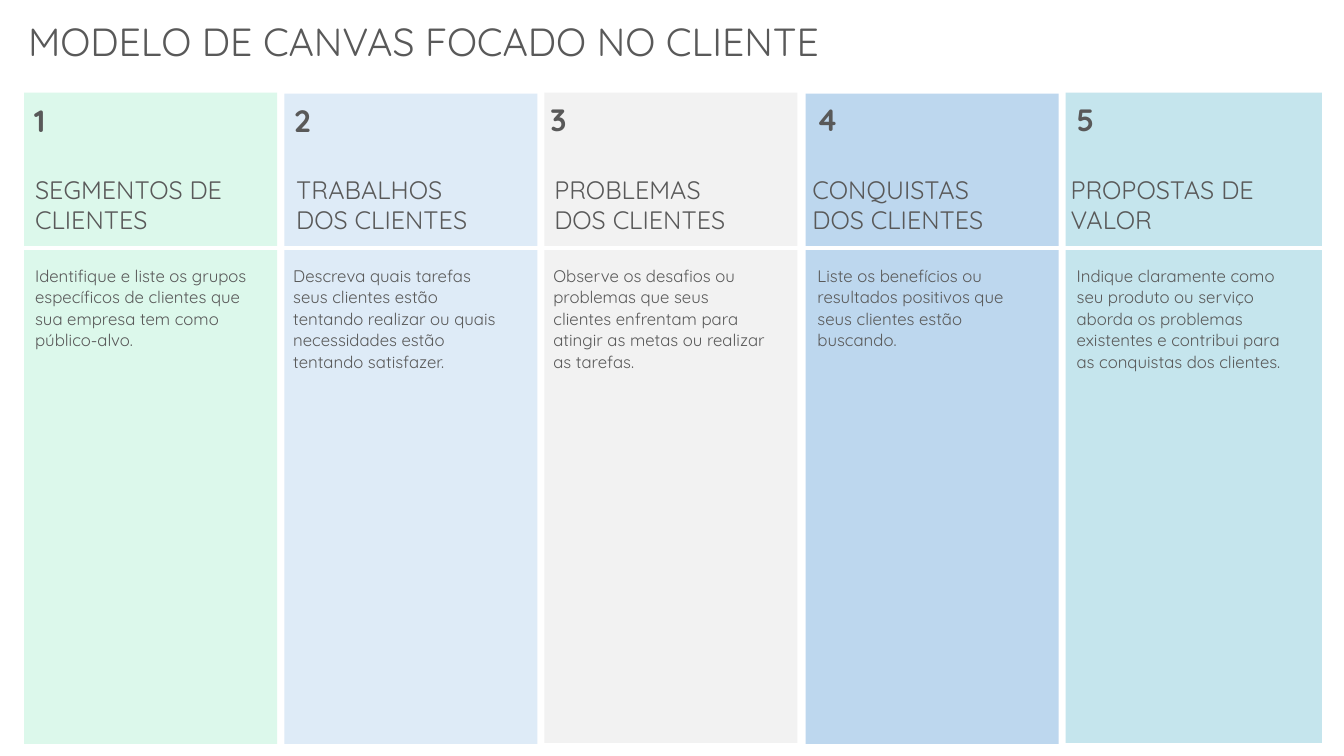
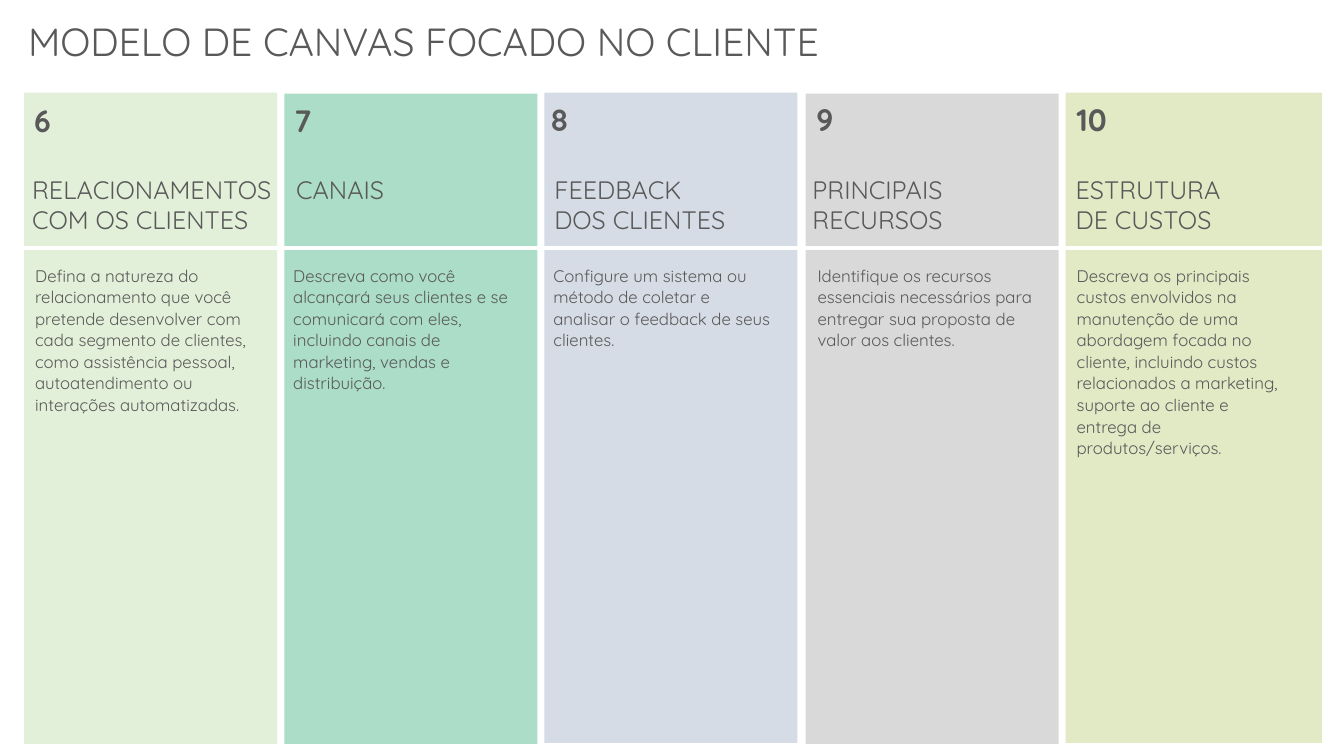
from collections import namedtuple

from lxml import etree
from pptx import Presentation
from pptx.dml.color import RGBColor
from pptx.enum.shapes import MSO_CONNECTOR, MSO_SHAPE
from pptx.enum.text import MSO_AUTO_SIZE
from pptx.oxml.ns import qn
from pptx.util import Pt

RECT = MSO_SHAPE.RECTANGLE
LINE = MSO_CONNECTOR.STRAIGHT
GROW = MSO_AUTO_SIZE.SHAPE_TO_FIT_TEXT
FIXED = MSO_AUTO_SIZE.NONE

PX = 9144
WIDE, HIGH = 1333, 750
FONT = "Quicksand"
TITLE = "MODELO DE CANVAS FOCADO NO CLIENTE"
COLORS = {
    "text": "595959", "rule": "FFFFFF",
    "mint": "DCF8EB", "ice": "DEEBF7", "pale": "F2F2F2",
    "sky": "BDD7EE", "aqua": "C5E5ED",
    "leaf": "E2F0D9", "jade": "ABDDC9", "slate": "D6DCE5",
    "gray": "D9D9D9", "lime": "E1E9C5",
}

Box = namedtuple("Box", "x y w h")
Slot = namedtuple("Slot", "wide high drop num_x num_y body_x")
Part = namedtuple("Part", "fill head head_x head_w body body_w")

LEFT, TOP, PITCH = 24, 92, 258.25
SLOTS = [
    Slot(251, 646, 0, 0, 1, 1),
    Slot(251, 645, 1, 0, 1, -1),
    Slot(251, 645, 0, -4, 0, -1),
    Slot(251, 645, 1, 1, 0, 2),
    Slot(254, 645, 0, 1, 0, 1),
]

PAGES = [
    [
        Part("mint", "SEGMENTOS DE CLIENTES", 1, 250,
             "Identifique e liste os grupos específicos de clientes que sua "
             "empresa tem como público-alvo.", 238),
        Part("ice", "TRABALHOS\nDOS CLIENTES", 2, 250,
             "Descreva quais tarefas seus clientes estão tentando realizar ou "
             "quais necessidades estão tentando satisfazer.", 223),
        Part("pale", "PROBLEMAS\nDOS CLIENTES", 0, 250,
             "Observe os desafios ou problemas que seus clientes enfrentam "
             "para atingir as metas ou realizar as tarefas.", 235),
        Part("sky", "CONQUISTAS\nDOS CLIENTES", -3, 250,
             "Liste os benefícios ou resultados positivos que seus clientes "
             "estão buscando.", 207),
        Part("aqua", "PROPOSTAS DE VALOR", -5, 250,
             "Indique claramente como seu produto ou serviço aborda os "
             "problemas existentes e contribui para as conquistas dos "
             "clientes.", 225),
    ],
    [
        Part("leaf", "RELACIONAMENTOS COM OS CLIENTES", -2, 271,
             "Defina a natureza do relacionamento que você pretende "
             "desenvolver com cada segmento de clientes, como assistência "
             "pessoal, autoatendimento ou interações automatizadas.", 238),
        Part("jade", "CANAIS", 2, 250,
             "Descreva como você alcançará seus clientes e se comunicará com "
             "eles, incluindo canais de marketing, vendas e distribuição.",
             235),
        Part("slate", "FEEDBACK\nDOS CLIENTES", 0, 250,
             "Configure um sistema ou método de coletar e analisar o feedback "
             "de seus clientes.", 235),
        Part("gray", "PRINCIPAIS\nRECURSOS", -3, 250,
             "Identifique os recursos essenciais necessários para entregar "
             "sua proposta de valor aos clientes.", 238),
        Part("lime", "ESTRUTURA\nDE CUSTOS", 0, 245,
             "Descreva os principais custos envolvidos na manutenção de uma "
             "abordagem focada no cliente, incluindo custos relacionados a "
             "marketing, suporte ao cliente e entrega de produtos/serviços.",
             225),
    ],
]


def emu(*sizes):
    return [size * PX for size in sizes]


def color(name):
    return RGBColor.from_string(COLORS[name])


def add_text(slide, box, text, size, bold=False, grow=False, loose=False):
    frame = slide.shapes.add_textbox(*emu(*box)).text_frame
    frame.word_wrap = True
    frame.auto_size = GROW if grow else FIXED
    para = frame.paragraphs[0]
    para.text = text
    if loose:
        para.line_spacing = 1.07
        para.space_after = Pt(8)
    for run in para.runs:
        run.font.name = FONT
        run.font.size = Pt(size)
        run.font.bold = bold
        run.font.color.rgb = color("text")


def add_panel(slide, box, fill):
    panel = slide.shapes.add_shape(RECT, *emu(*box))
    panel.shadow.inherit = False
    panel.fill.solid()
    panel.fill.fore_color.rgb = color(fill)
    panel.line.fill.background()


def add_rule(slide, x, y, w):
    rule = slide.shapes.add_connector(LINE, *emu(x, y, x + w, y))
    rule.line.color.rgb = color("rule")
    rule.line.width = Pt(2.25)
    props = rule.element.find(qn("p:spPr"))
    etree.SubElement(props, qn("a:effectLst"))


def add_column(slide, box, slot, part, number):
    x, y, w, h = box
    add_panel(slide, Box(x, y + slot.drop, w, h), part.fill)
    label = str(number)
    num_w = 46 if len(label) == 1 else 60
    add_text(slide, Box(x + slot.num_x, y + slot.num_y, num_w, 64),
             label, 22, bold=True, loose=True)
    add_text(slide, Box(x + part.head_x, y + 76, part.head_w, 71),
             part.head, 18, grow=True)
    add_text(slide, Box(x + slot.body_x, y + 165, part.body_w, 157),
             part.body, 12, loose=True)


def add_page(deck, parts, first):
    slide = deck.slides.add_slide(deck.slide_layouts[6])
    add_text(slide, Box(18, 12, 1295, 57), TITLE, 28, grow=True)
    for i, (slot, part) in enumerate(zip(SLOTS, parts)):
        box = Box(LEFT + round(i * PITCH), TOP, slot.wide, slot.high)
        add_column(slide, box, slot, part, first + i)
    add_rule(slide, LEFT, 246, 1296)


def main():
    deck = Presentation()
    deck.slide_width, deck.slide_height = emu(WIDE, HIGH)
    for i, parts in enumerate(PAGES):
        add_page(deck, parts, 1 + i * len(SLOTS))
    deck.save("out.pptx")


if __name__ == "__main__":
    main()
